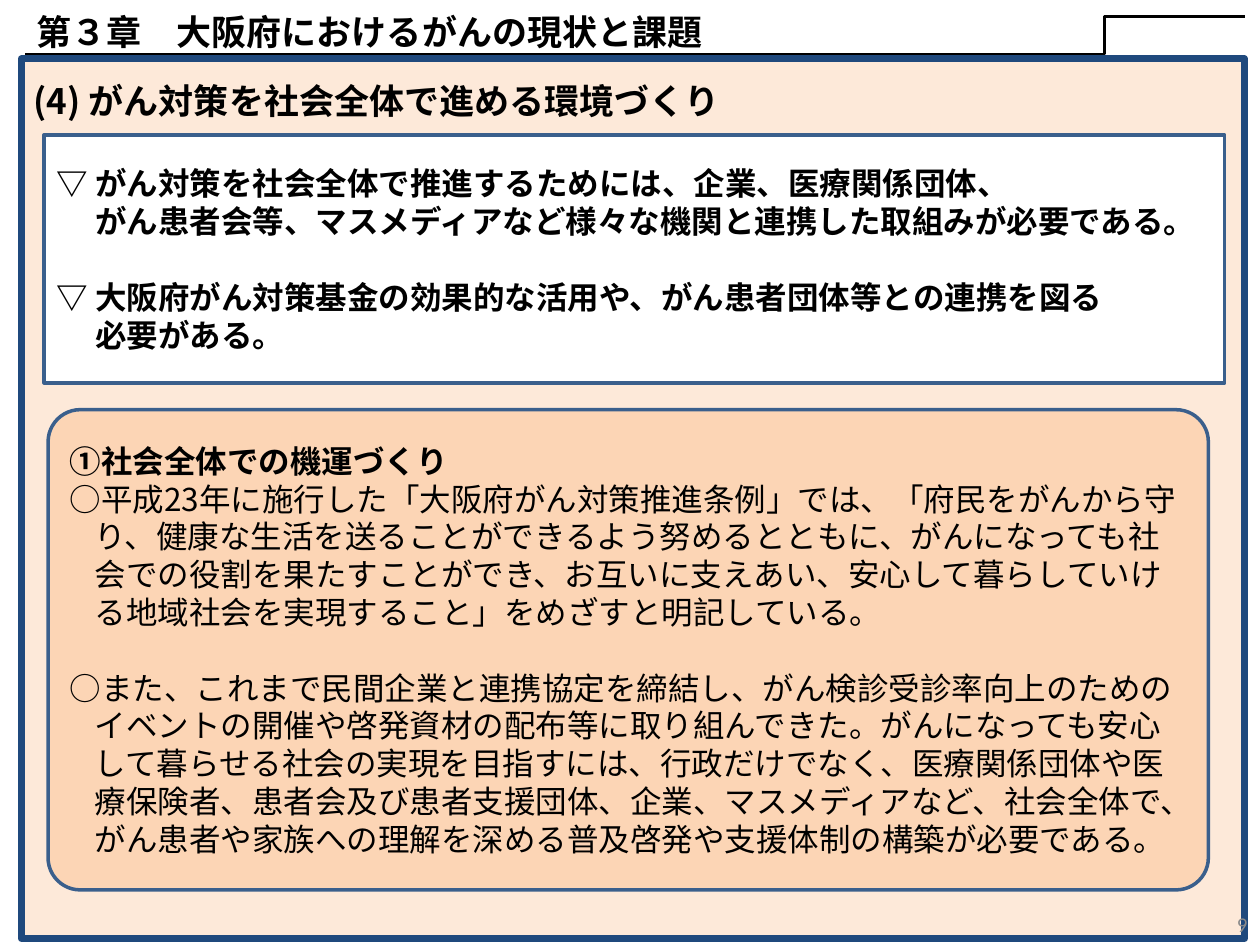
from lxml.etree import SubElement
from pptx import Presentation
from pptx.dml.color import RGBColor
from pptx.enum.shapes import MSO_CONNECTOR as Link, MSO_SHAPE as Preset
from pptx.enum.text import MSO_ANCHOR as Anchor, MSO_AUTO_SIZE as Fit, PP_ALIGN as Align
from pptx.oxml.ns import qn
from pptx.util import Cm, Pt

SANS = "Noto Sans CJK JP"
LINE_PITCH = 21.6


def color(value):
    return RGBColor.from_string(value)


def write(box, text, *, size=18, bold=False, font=SANS, ink="000000",
          align=Align.LEFT, hang=0, pitch=None, before=0, first=False):
    """Add one paragraph, or fill the first one; hang is in cm, pitch and before in points."""
    frame = box.text_frame
    para = frame.paragraphs[0] if first else frame.add_paragraph()
    para.text = text
    props = para._p.get_or_add_pPr()
    props.set("marL", str(Cm(hang)))
    props.set("indent", str(-Cm(hang)))
    SubElement(props, qn("a:buNone"))
    para.alignment = align
    para.space_before = Pt(before)
    if pitch:
        para.line_spacing = Pt(pitch)
    for span in para.runs:
        span.font.size, span.font.bold, span.font.name = Pt(size), bold, font
        span.font.color.rgb = color(ink)
        SubElement(span._r.get_or_add_rPr(), qn("a:ea"), typeface=font)


class PageBuilder:
    border = "3A5F8C"
    peach = "FCD5B5"

    def __init__(self, deck):
        self.page = deck.slides.add_slide(deck.slide_layouts[1])
        self.shapes = self.page.shapes

    def prepare(self, box, anchor):
        frame = box.text_frame
        frame.word_wrap = True
        frame.auto_size = Fit.NONE
        frame.vertical_anchor = anchor
        return box

    def paint(self, box, fill, line, width):
        box.fill.solid()
        box.fill.fore_color.rgb = color(fill)
        box.line.color.rgb = color(line)
        box.line.width = Pt(width)

    def placeholder(self, index, left, top, width, height):
        box = self.page.placeholders[index]
        box.left, box.top, box.width, box.height = map(Cm, (left, top, width, height))
        return self.prepare(box, Anchor.MIDDLE)

    def panel(self, preset, left, top, width, height, *, fill, line, weight,
              anchor=Anchor.MIDDLE):
        box = self.shapes.add_shape(preset, *map(Cm, (left, top, width, height)))
        box.shadow.inherit = False
        self.paint(box, fill, line, weight)
        return self.prepare(box, anchor)

    def label(self, left, top, width, height, anchor):
        box = self.shapes.add_textbox(*map(Cm, (left, top, width, height)))
        return self.prepare(box, anchor)

    def elbow(self, x1, y1, x2, y2, bend):
        """Draw a stepped line whose step is at the share bend of its width."""
        link = self.shapes.add_connector(Link.ELBOW, *map(Cm, (x1, y1, x2, y2)))
        link.line.color.rgb = color("000000")
        link.line.width = Pt(1.5)
        props = link.element.spPr
        SubElement(props, qn("a:effectLst"))
        guides = props.find(qn("a:prstGeom")).get_or_add_avLst()
        SubElement(guides, qn("a:gd"), name="adj1", fmla=f"val {round(bend * 100000)}")


def main():
    deck = Presentation()
    deck.slide_width, deck.slide_height = Cm(25.4), Cm(19.05)
    builder = PageBuilder(deck)

    chapter = builder.placeholder(0, 0.48, 0.08, 17.81, 1.12)
    write(chapter, "第３章　大阪府におけるがんの現状と課題", size=20, bold=True, first=True)

    section = builder.panel(Preset.RECTANGLE, 0.43, 1.19, 24.66, 17.73, fill=builder.peach,
                            line="1F497D", weight=4, anchor=Anchor.TOP)
    section.text_frame.margin_top = Cm(0.42)
    tint = section.element.spPr.find(qn("a:solidFill"))[0]
    SubElement(tint, qn("a:alpha"), val="50000")
    write(section, "(4) がん対策を社会全体で進める環境づくり", size=20, bold=True,
          pitch=24, first=True)
    chapter.element.addprevious(section.element)

    builder.elbow(0.51, 1.09, 25.1, 0.33, bend=0.885)

    number = builder.label(19.48, 17.98, 5.92, 1.02, Anchor.BOTTOM)
    write(number, "9", size=12, font="Calibri", ink="8C8C8C", align=Align.RIGHT, first=True)

    details = builder.panel(Preset.ROUNDED_RECTANGLE, 0.97, 8.26, 23.39, 9.68,
                            fill=builder.peach, line=builder.border, weight=2)
    details.adjustments[0] = 0.067
    write(details, "①社会全体での機運づくり", bold=True, pitch=LINE_PITCH, first=True)
    write(details, "○平成23年に施行した「大阪府がん対策推進条例」では、「府民をがんから守り、"
          "健康な生活を送ることができるよう努めるとともに、がんになっても社会での役割を"
          "果たすことができ、お互いに支えあい、安心して暮らしていける地域社会を実現すること」"
          "をめざすと明記している。", hang=0.5, pitch=LINE_PITCH)
    write(details, "○また、これまで民間企業と連携協定を締結し、がん検診受診率向上のための"
          "イベントの開催や啓発資材の配布等に取り組んできた。がんになっても安心して暮らせる"
          "社会の実現を目指すには、行政だけでなく、医療関係団体や医療保険者、患者会及び"
          "患者支援団体、企業、マスメディアなど、社会全体で、がん患者や家族への理解を深める"
          "普及啓発や支援体制の構築が必要である。",
          hang=0.5, pitch=LINE_PITCH, before=LINE_PITCH)

    summary = builder.placeholder(1, 0.89, 2.72, 23.8, 5)
    builder.paint(summary, "FFFFFF", builder.border, 2)
    write(summary, "▽ がん対策を社会全体で推進するためには、企業、医療関係団体、\v"
          "がん患者会等、マスメディアなど様々な機関と連携した取組みが必要である。",
          bold=True, hang=0.78, pitch=LINE_PITCH, first=True)
    write(summary, "▽ 大阪府がん対策基金の効果的な活用や、がん患者団体等との連携を図る\v"
          "必要がある。", bold=True, hang=0.78, pitch=LINE_PITCH, before=LINE_PITCH)

    deck.save("out.pptx")


if __name__ == "__main__":
    main()
